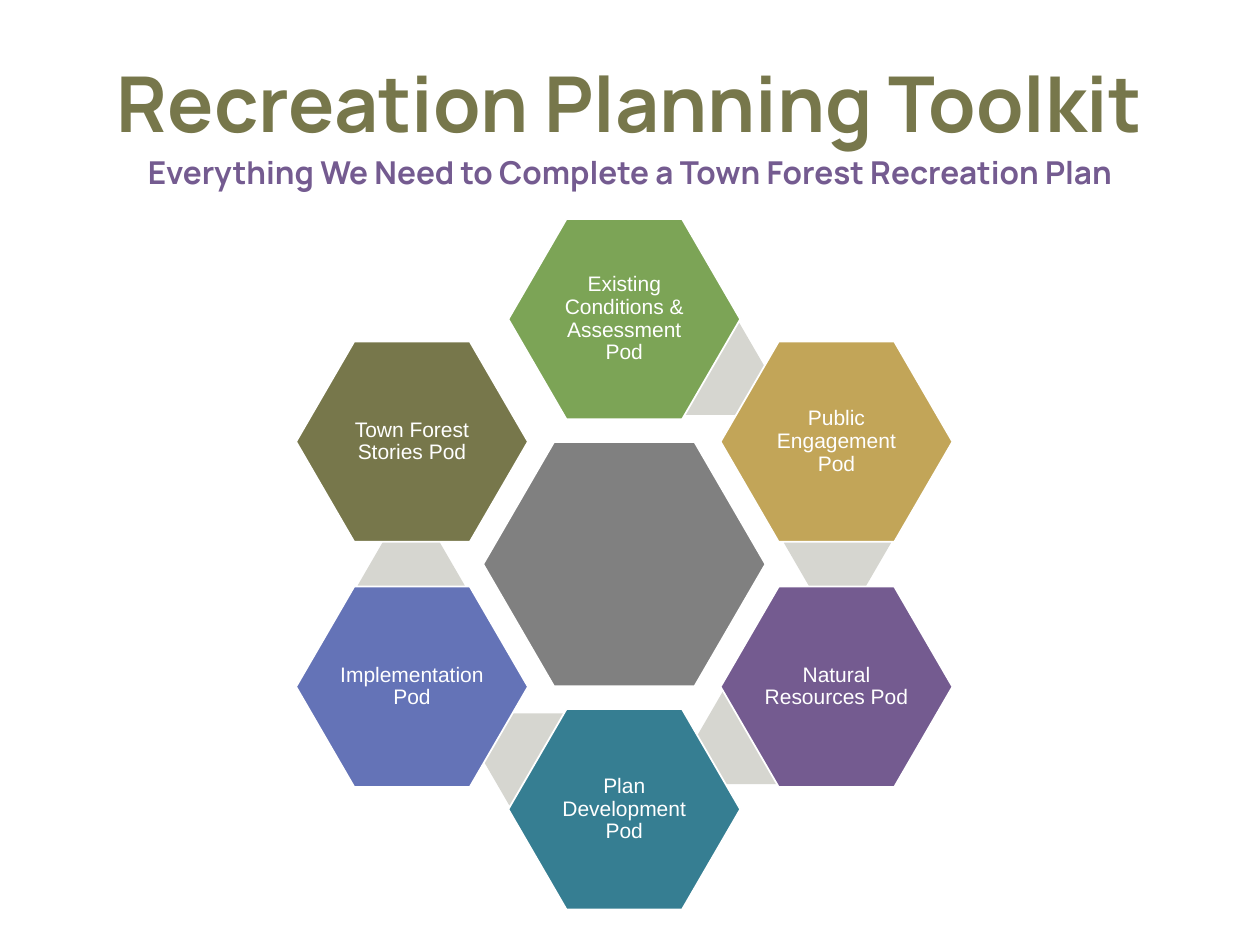
from math import cos, radians, sin

from pptx import Presentation
from pptx import util as u
from pptx.dml.color import RGBColor
from pptx.enum import shapes, text

OLIVE = RGBColor(0x77, 0x77, 0x4B)
PURPLE = RGBColor(0x74, 0x5B, 0x90)
GREEN = RGBColor(0x7C, 0xA4, 0x56)
GOLD = RGBColor(0xC2, 0xA5, 0x58)
TEAL = RGBColor(0x36, 0x7E, 0x92)
BLUE = RGBColor(0x64, 0x73, 0xB7)
GREY = RGBColor(0x80, 0x80, 0x80)
PALE = RGBColor(0xD6, 0xD6, 0xD0)
WHITE = RGBColor(0xFF, 0xFF, 0xFF)

# Pods clockwise from the top
PODS = [
    ("Existing Conditions & Assessment Pod", GREEN),
    ("Public Engagement Pod", GOLD),
    ("Natural Resources Pod", PURPLE),
    ("Plan Development Pod", TEAL),
    ("Implementation Pod", BLUE),
    ("Town Forest Stories Pod", OLIVE),
]

# Grid of 100 columns by 75 rows
CELL = u.Inches(0.1)
HUB = (49.55, 44.78)
HUB_SIZE = (22.4, 19.4)
POD_SIZE = (18.4, 15.9)
LINK_SIZE = (8.5, 7.3)
POD_RADIUS = 19.45
LINK_RADIUS = 17
LINK_TURN = 24.3
STEP = 360 / len(PODS)


def around_hub(radius, angle):
    """Point at a clockwise angle from the top of the ring."""
    turn = radians(angle)
    return HUB[0] + radius * sin(turn), HUB[1] - radius * cos(turn)


class Page:
    heading_font = "Manrope"
    label_font = "Arial"

    def __init__(self, deck):
        self.slide = deck.slides.add_slide(deck.slide_layouts[5])

    def set_text(self, shape, words, font, size, color, bold, spacing):
        frame = shape.text_frame
        frame.text = words
        frame.word_wrap = True
        para = frame.paragraphs[0]
        para.alignment = text.PP_ALIGN.CENTER
        para.line_spacing = spacing
        for span in para.runs:
            span.font.name = font
            span.font.size = u.Pt(size)
            span.font.bold = bold
            span.font.color.rgb = color
        return frame

    def title(self, words, left, top, width, height):
        box = self.slide.shapes.title
        box.left, box.top, box.width, box.height = (
            int(n * CELL) for n in (left, top, width, height))
        frame = self.set_text(box, words, self.heading_font, 44, OLIVE, True, 0.9)
        frame.auto_size = text.MSO_AUTO_SIZE.NONE
        frame.vertical_anchor = text.MSO_ANCHOR.MIDDLE

    def subtitle(self, words, left, top, width, height):
        box = self.slide.shapes.add_textbox(
            *(int(n * CELL) for n in (left, top, width, height)))
        self.set_text(box, words, self.heading_font, 18, PURPLE, True, 0.8)

    def hexagon(self, center, size, color, outlined=True, label=None):
        (x, y), (width, height) = center, size
        shape = self.slide.shapes.add_shape(
            shapes.MSO_SHAPE.HEXAGON,
            *(int(n * CELL) for n in (x - width / 2, y - height / 2, width, height)))
        shape.adjustments[0] = 0.29
        shape.shadow.inherit = False
        shape.fill.solid()
        shape.fill.fore_color.rgb = color
        if outlined:
            shape.line.color.rgb = WHITE
            shape.line.width = u.Pt(1)
        else:
            shape.line.fill.background()
        if label:
            frame = self.set_text(shape, label, self.label_font, 12, WHITE, False, 0.9)
            frame.vertical_anchor = text.MSO_ANCHOR.MIDDLE
            frame.margin_left = frame.margin_right = u.Inches(0.02)
            frame.margin_top = frame.margin_bottom = u.Inches(0.02)


def main():
    deck = Presentation()
    deck.slide_width, deck.slide_height = 100 * CELL, 75 * CELL
    page = Page(deck)

    # Headings
    page.title("Recreation Planning Toolkit", 6.9, 1.3, 86.2, 14.5)
    page.subtitle("Everything We Need to Complete a Town Forest Recreation Plan",
                  6.9, 12.2, 86.2, 3.6)

    # Hub, then the ring: each link lies under its pod, and the last pod has none
    page.hexagon(HUB, HUB_SIZE, GREY)
    for index, (label, color) in enumerate(PODS):
        angle = index * STEP
        if index < len(PODS) - 1:
            page.hexagon(around_hub(LINK_RADIUS, angle + LINK_TURN),
                         LINK_SIZE, PALE, outlined=False)
        page.hexagon(around_hub(POD_RADIUS, angle), POD_SIZE, color, label=label)

    deck.save("out.pptx")


if __name__ == "__main__":
    main()
